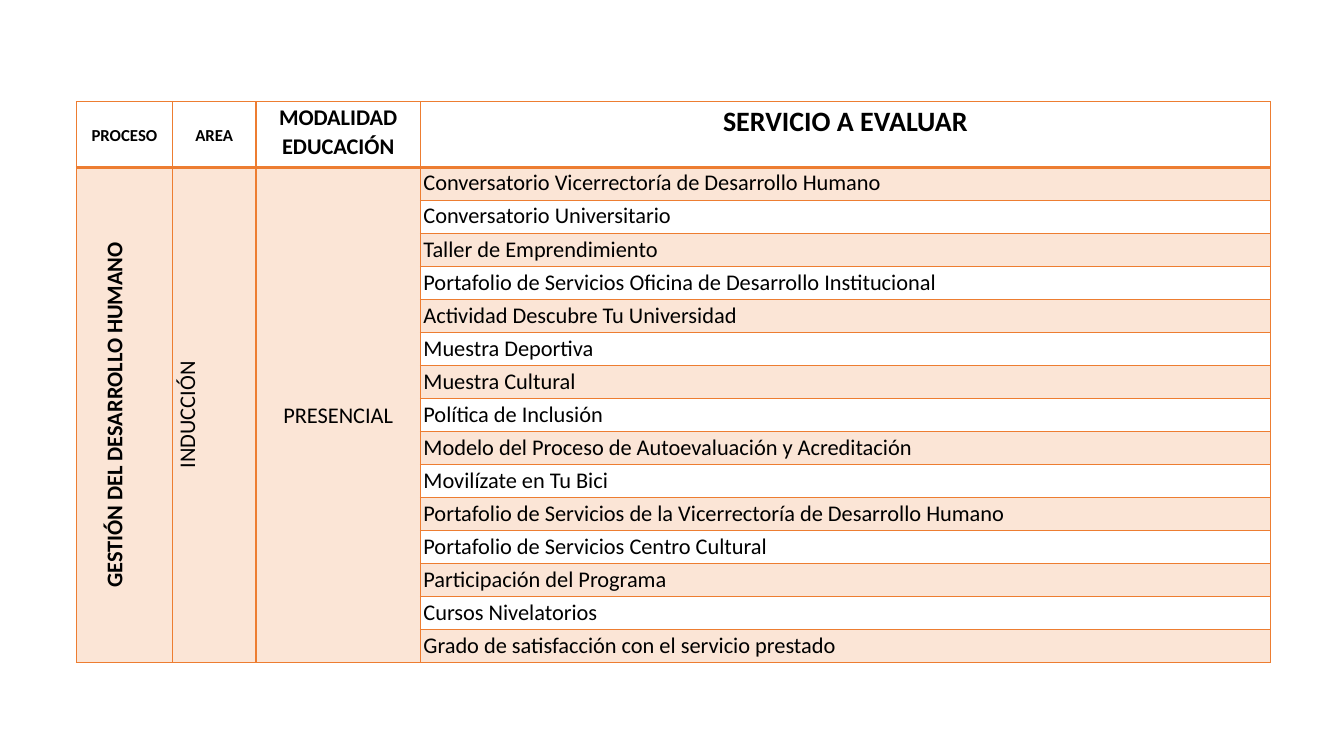
from dataclasses import dataclass

from lxml.etree import SubElement
from pptx import Presentation
from pptx.dml.color import RGBColor
from pptx.enum.text import MSO_ANCHOR as Anchor, PP_ALIGN as Align
from pptx.oxml.ns import qn
from pptx.table import _Cell as Cell
from pptx.util import Length, Pt

ORANGE = RGBColor(0xED, 0x7D, 0x31)
PEACH = RGBColor(0xFB, 0xE5, 0xD6)
BLACK = RGBColor(0, 0, 0)

LEFT, TOP = Pt(54.7), Pt(72.7)
WIDTHS = [Pt(68.4), Pt(59.8), Pt(117.4), Pt(607.2)]
HEAD, ROW = Pt(46.8), Pt(23.6)


@dataclass(frozen=True)
class Label:
    text: str
    size: Length = Pt(16)
    bold: bool = False
    align: Align = Align.CENTER
    anchor: Anchor = Anchor.MIDDLE
    turned: bool = False
    spacing: float | Length = 1.05


HEADERS = [
    Label("PROCESO", Pt(12), True),
    Label("AREA", Pt(12), True),
    Label("MODALIDAD EDUCACIÓN", bold=True, anchor=Anchor.TOP),
    Label("SERVICIO A EVALUAR", Pt(20), True, anchor=Anchor.TOP),
]
GROUPS = [
    Label("GESTIÓN DEL DESARROLLO HUMANO", bold=True, turned=True, spacing=Pt(37)),
    Label("INDUCCIÓN", turned=True),
    Label("PRESENCIAL"),
]
TOPICS = [
    "Conversatorio Vicerrectoría de Desarrollo Humano",
    "Conversatorio Universitario",
    "Taller de Emprendimiento",
    "Portafolio de Servicios Oficina de Desarrollo Institucional",
    "Actividad Descubre Tu Universidad",
    "Muestra Deportiva",
    "Muestra Cultural",
    "Política de Inclusión",
    "Modelo del Proceso de Autoevaluación y Acreditación",
    "Movilízate en Tu Bici",
    "Portafolio de Servicios de la Vicerrectoría de Desarrollo Humano",
    "Portafolio de Servicios Centro Cultural",
    "Participación del Programa",
    "Cursos Nivelatorios",
    "Grado de satisfacción con el servicio prestado",
]


def frame(cell: Cell, base: Length) -> None:
    props = cell._tc.get_or_add_tcPr()
    for side in "LRTB":
        width = base if side == "B" else Pt(1)
        line = SubElement(props, qn(f"a:ln{side}"), w=str(int(width)))
        fill = SubElement(line, qn("a:solidFill"))
        SubElement(fill, qn("a:srgbClr"), val=str(ORANGE))


def paint(cell: Cell, color: RGBColor | None) -> None:
    if color is None:
        cell.fill.background()
    else:
        cell.fill.solid()
        cell.fill.fore_color.rgb = color


def write(cell: Cell, label: Label) -> None:
    side = Pt(0) if label.turned else Pt(2.2)
    cell.margin_left = cell.margin_right = side
    cell.margin_top = Pt(0) if label.turned else Pt(0.7)
    cell.margin_bottom = Pt(0)
    cell.vertical_anchor = label.anchor
    if label.turned:
        cell._tc.get_or_add_tcPr().set("vert", "vert270")
    cell.text = label.text
    para = cell.text_frame.paragraphs[0]
    para.alignment = label.align
    para.line_spacing = label.spacing
    font = para.font
    font.name, font.size, font.bold = "Calibri", label.size, label.bold
    font.color.rgb = BLACK


def main() -> None:
    deck = Presentation()
    deck.slide_width, deck.slide_height = Pt(960), Pt(540)
    slide = deck.slides.add_slide(deck.slide_layouts[6])
    count = len(TOPICS)
    table = slide.shapes.add_table(
        count + 1, len(WIDTHS), LEFT, TOP, sum(WIDTHS), HEAD + count * ROW
    ).table
    table.first_row = table.horz_banding = False
    for col, width in zip(table.columns, WIDTHS):
        col.width = width
    for i, row in enumerate(table.rows):
        row.height = ROW if i else HEAD
        for j, cell in enumerate(row.cells):
            frame(cell, Pt(1) if i else Pt(2))
            group = i > 0 and j < len(GROUPS)
            paint(cell, PEACH if group or i % 2 else None)

    for j, label in enumerate(HEADERS):
        write(table.cell(0, j), label)
    for j, label in enumerate(GROUPS):
        table.cell(1, j).merge(table.cell(count, j))
        write(table.cell(1, j), label)
    for i, text in enumerate(TOPICS, 1):
        label = Label(text, align=Align.JUSTIFY, anchor=Anchor.TOP)
        write(table.cell(i, len(GROUPS)), label)
    deck.save("out.pptx")


if __name__ == "__main__":
    main()
